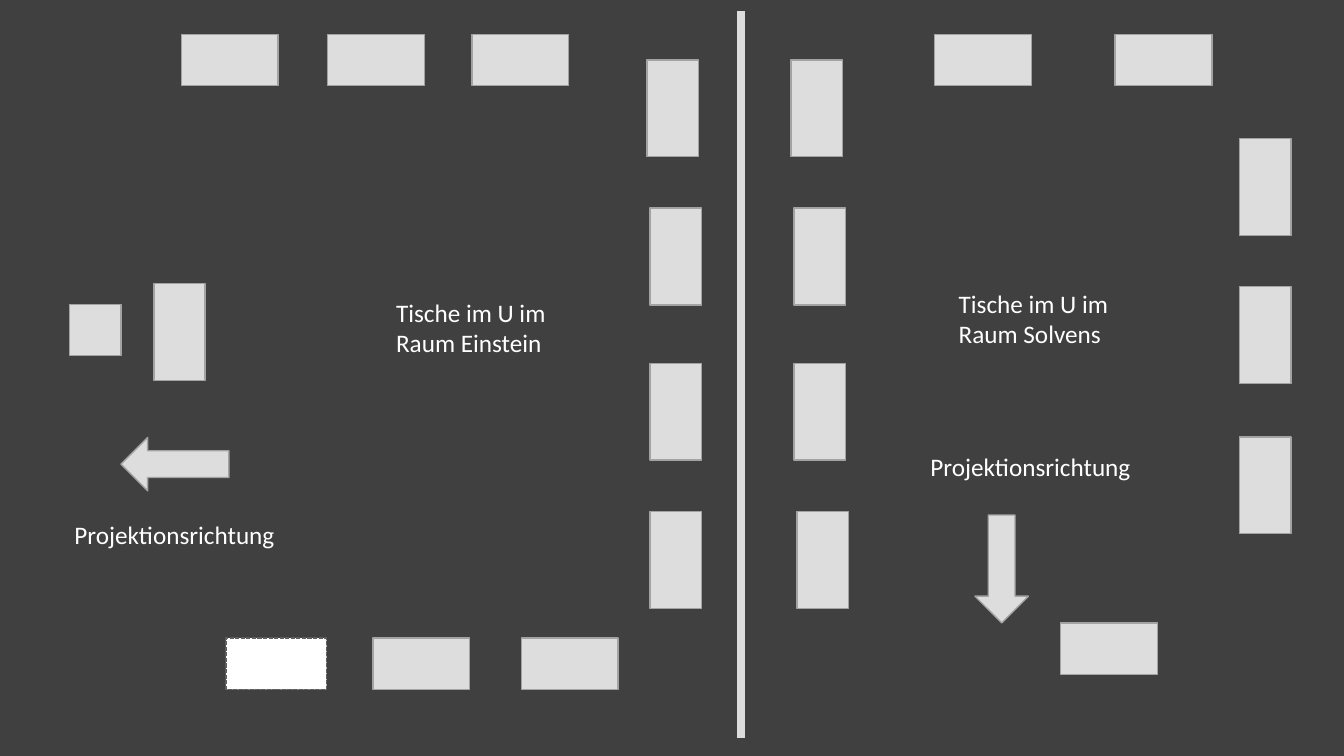
from dataclasses import dataclass

from lxml.etree import SubElement
from pptx import Presentation
from pptx.dml.color import RGBColor
from pptx.enum.dml import MSO_LINE
from pptx.enum.shapes import MSO_CONNECTOR, MSO_SHAPE
from pptx.enum.text import MSO_AUTO_SIZE
from pptx.oxml.ns import qn
from pptx.shapes.autoshape import Shape
from pptx.slide import Slide
from pptx.util import Inches, Pt

BACKGROUND = "404040"
FURNITURE = "DDDDDD"
OUTLINE = "A3A3A3"
WHITE = "FFFFFF"
DASHED_OUTLINE = "5F5F5F"
TABLE_LENGTH = 0.96
TABLE_DEPTH = 0.51
ARROW_LENGTH = 1.07
ARROW_WIDTH = 0.53


@dataclass
class Item:
    left: float
    top: float
    width: float = TABLE_LENGTH
    height: float = TABLE_DEPTH
    rotation: float = 0
    kind: MSO_SHAPE = MSO_SHAPE.RECTANGLE
    fill: str = FURNITURE
    outline: str = OUTLINE


@dataclass
class Label:
    text: str
    left: float
    top: float
    width: float
    height: float
    wrap: bool


def color(value: str) -> RGBColor:
    return RGBColor.from_string(value)


def row(top: float, lefts: list[float]) -> list[Item]:
    return [Item(left, top) for left in lefts]


def column(places: list[tuple[float, float]]) -> list[Item]:
    return [Item(left, top, rotation=90) for left, top in places]


def draw_item(page: Slide, item: Item) -> Shape:
    shape = page.shapes.add_shape(
        item.kind, Inches(item.left), Inches(item.top), Inches(item.width), Inches(item.height)
    )
    shape.rotation = item.rotation
    shape.shadow.inherit = False
    shape.fill.solid()
    shape.fill.fore_color.rgb = color(item.fill)
    shape.line.color.rgb = color(item.outline)
    shape.line.width = Pt(1)
    return shape


def draw_label(page: Slide, label: Label) -> None:
    box = page.shapes.add_textbox(
        Inches(label.left), Inches(label.top), Inches(label.width), Inches(label.height)
    )
    frame = box.text_frame
    frame.text = label.text
    frame.word_wrap = label.wrap
    frame.auto_size = MSO_AUTO_SIZE.SHAPE_TO_FIT_TEXT
    span = frame.paragraphs[0].runs[0]
    span.font.name = "Calibri"
    span.font.size = Pt(18)
    span.font.color.rgb = color(WHITE)


def draw_divider(page: Slide, left: float, top: float, bottom: float) -> None:
    divider = page.shapes.add_connector(
        MSO_CONNECTOR.STRAIGHT, Inches(left), Inches(top), Inches(left), Inches(bottom)
    )
    divider.line.color.rgb = color(FURNITURE)
    divider.line.width = Pt(6)
    SubElement(divider._element.spPr, qn("a:effectLst"))


LEFT_ROOM = [
    *row(6.33, [3.7, 5.17]),
    *column([(6.19, 0.82), (6.22, 2.29), (6.22, 3.83), (6.22, 5.3)]),
    *row(0.34, [1.8, 3.25, 4.68]),
    *column([(1.3, 3.04)]),
    Item(0.69, 3.02, width=TABLE_DEPTH),
    Item(1.2, 4.34, ARROW_LENGTH, ARROW_WIDTH, kind=MSO_SHAPE.LEFT_ARROW),
]
RIGHT_ROOM = [
    *column([(7.62, 0.82), (7.65, 2.29), (7.65, 3.83), (7.68, 5.3)]),
    *row(0.34, [9.27, 11.06]),
    *column([(12.07, 1.6), (12.07, 3.07), (12.07, 4.56)]),
    *row(6.18, [10.52]),
    Item(9.67, 5.11, ARROW_WIDTH, ARROW_LENGTH, kind=MSO_SHAPE.DOWN_ARROW),
]
RESERVED_TABLE = Item(2.24, 6.33, width=1, fill=WHITE, outline=DASHED_OUTLINE)
LABELS = [
    Label("Tische im U im Raum Einstein", 3.83, 2.9, 1.88, 0.71, True),
    Label("Projektionsrichtung", 0.64, 5.1, 2.21, 0.4, False),
    Label("Tische im U im Raum Solvens", 9.41, 2.81, 1.86, 0.71, True),
    Label("Projektionsrichtung", 9.13, 4.43, 2.21, 0.4, False),
]


def main() -> None:
    deck = Presentation()
    deck.slide_width = Inches(13.33)
    deck.slide_height = Inches(7.5)
    page = deck.slides.add_slide(deck.slide_layouts[6])
    page.background.fill.solid()
    page.background.fill.fore_color.rgb = color(BACKGROUND)
    for item in LEFT_ROOM + RIGHT_ROOM:
        draw_item(page, item)
    for label in LABELS:
        draw_label(page, label)
    draw_item(page, RESERVED_TABLE).line.dash_style = MSO_LINE.SQUARE_DOT
    draw_divider(page, 7.35, 0.11, 7.32)
    deck.save("out.pptx")


if __name__ == "__main__":
    main()
